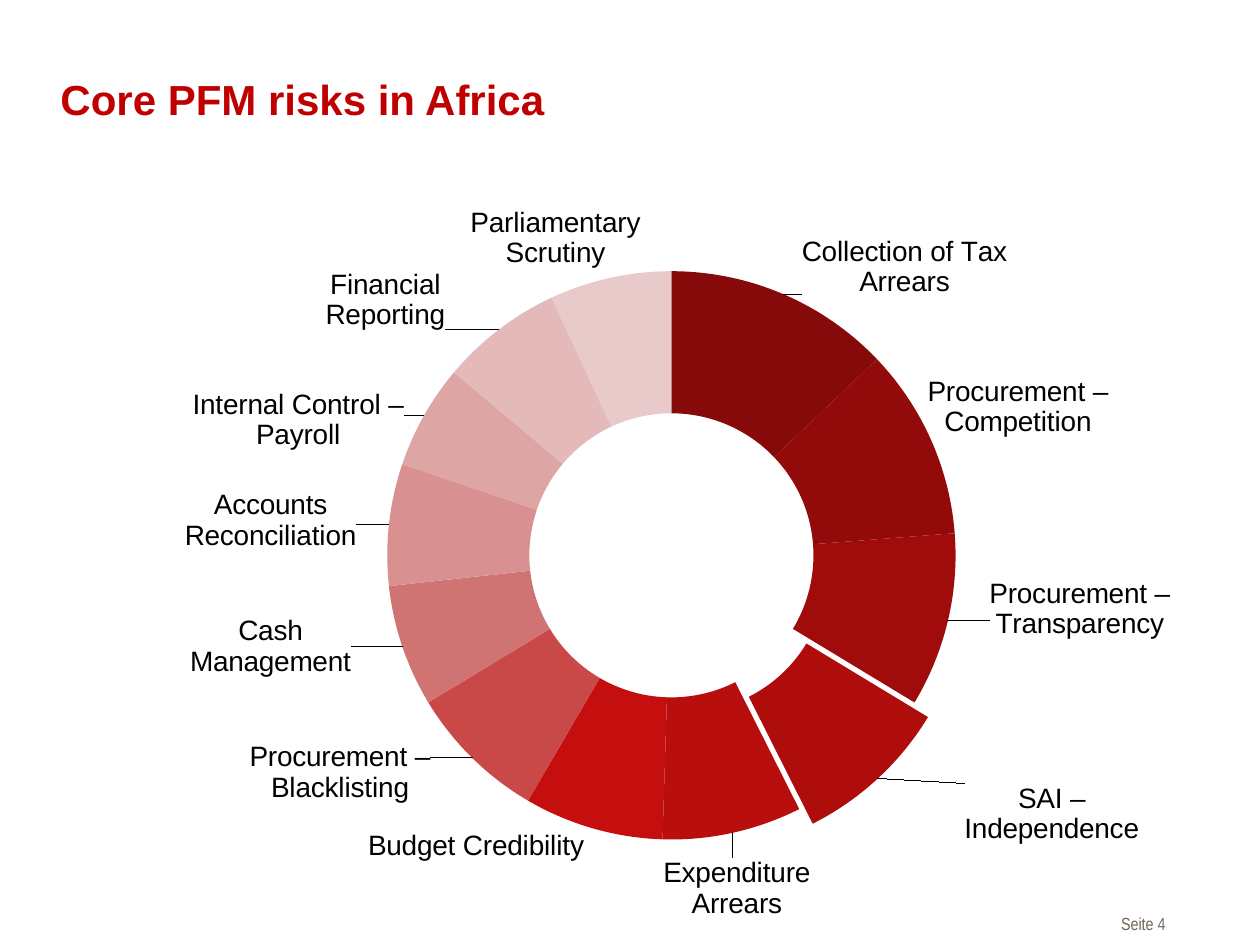
from math import cos, pi, sin

from lxml import etree
from pptx import Presentation
from pptx.chart.data import CategoryChartData
from pptx.dml.color import RGBColor
from pptx.enum.chart import XL_CHART_TYPE as ChartType
from pptx.enum.text import MSO_ANCHOR, PP_ALIGN
from pptx.oxml.ns import qn
from pptx.util import Inches, Pt

TITLE_RED = RGBColor(0xC0, 0x00, 0x00)
BLACK = RGBColor(0x00, 0x00, 0x00)
FOOTER_BROWN = RGBColor(0x6E, 0x64, 0x52)
FOOTER_GREY = RGBColor(0x72, 0x72, 0x72)

CHART_LEFT, CHART_TOP, CHART_WIDTH, CHART_HEIGHT = 0.02, 0.27, 9.98, 7.21
CENTER_X, CENTER_Y = 5.33, 4.41
RING_RADIUS = 1.69
EXPLODED, EXPLOSION = 3, 14

RISKS = [
    ("Collection of Tax Arrears", 13, RGBColor(0x86, 0x0A, 0x09), 7.18, 2.12),
    ("Procurement – Competition", 11, RGBColor(0x92, 0x0B, 0x0A), 8.08, 3.23),
    ("Procurement – Transparency", 10, RGBColor(0xA0, 0x0C, 0x0B), 8.57, 4.83),
    ("SAI – Independence", 9, RGBColor(0xAE, 0x0D, 0x0C), 8.32, 6.43),
    ("Expenditure Arrears", 8, RGBColor(0xB8, 0x0E, 0x0D), 5.85, 7.05),
    ("Budget Credibility", 8, RGBColor(0xC4, 0x0F, 0x0E), 3.78, 6.71),
    ("Procurement – Blacklisting", 8, RGBColor(0xC9, 0x48, 0x48), 2.70, 6.13),
    ("Cash Management", 7, RGBColor(0xD0, 0x73, 0x73), 2.15, 5.13),
    ("Accounts Reconciliation", 7, RGBColor(0xD8, 0x90, 0x90), 2.15, 4.13),
    ("Internal Control – Payroll", 6, RGBColor(0xDD, 0xA5, 0xA4), 2.37, 3.33),
    ("Financial Reporting", 7, RGBColor(0xE3, 0xB9, 0xB9), 3.06, 2.38),
    ("Parliamentary Scrutiny", 7, RGBColor(0xE8, 0xCA, 0xCA), 4.41, 1.89),
]


def set_font(font, size, color, name="Arial", bold=False):
    font.size = Pt(size)
    font.name = name
    font.bold = bold
    font.color.rgb = color


def manual_layout(**values):
    layout = etree.Element(qn("c:layout"))
    manual = etree.SubElement(layout, qn("c:manualLayout"))
    for tag, value in values.items():
        etree.SubElement(manual, qn(f"c:{tag}")).set("val", str(value))
    return layout


def add_title(slide, text):
    sp = slide.shapes.title
    sp.left, sp.top, sp.width, sp.height = map(Inches, (0.38, 0.45, 8.5, 0.67))
    tf = sp.text_frame
    tf.text = text
    tf.vertical_anchor = MSO_ANCHOR.MIDDLE
    p = tf.paragraphs[0]
    p.alignment = PP_ALIGN.LEFT
    set_font(p.font, 24, TITLE_RED, bold=True)


def add_page_number(slide):
    sp = slide.shapes.add_textbox(*map(Inches, (8.24, 7.2, 1.01, 0.27)))
    tf = sp.text_frame
    tf.word_wrap = True
    tf.margin_right = 0
    p = tf.paragraphs[0]
    p.alignment = PP_ALIGN.RIGHT
    for text, color in (("Seite ", FOOTER_BROWN), ("4", FOOTER_GREY)):
        r = p.add_run()
        r.text = text
        set_font(r.font, 10, color, "Arial Narrow")


def place_plot(chart):
    area = chart._chartSpace.chart.plotArea
    old = area.find(qn("c:layout"))
    if old is not None:
        area.remove(old)
    area.insert(0, manual_layout(layoutTarget="inner", xMode="edge", yMode="edge",
                                 x=0.306, y=0.197, w=0.452, h=0.754))


def format_labels(series):
    labels = series.data_labels
    labels.show_category_name = True
    labels.show_value = False
    set_font(labels.font, 16, BLACK)
    dLbls = labels._element
    leader = dLbls.find(qn("c:showLeaderLines"))
    if leader is None:
        leader = etree.SubElement(dLbls, qn("c:showLeaderLines"))
    leader.set("val", "1")


def place_label(series, index, x, y):
    set_font(series.points[index].data_label.font, 16, BLACK)
    dLbl = series._element.xpath(f"c:dLbls/c:dLbl[c:idx/@val='{index}']")[0]
    dLbl.find(qn("c:showVal")).set("val", "0")
    dLbl.find(qn("c:showCatName")).set("val", "1")
    dLbl.find(qn("c:idx")).addnext(manual_layout(
        x=round(x / CHART_WIDTH, 4), y=round(y / CHART_HEIGHT, 4)))


def add_risk_chart(slide):
    data = CategoryChartData()
    data.categories = [risk[0] for risk in RISKS]
    data.add_series("Series 1", [risk[1] for risk in RISKS])
    box = map(Inches, (CHART_LEFT, CHART_TOP, CHART_WIDTH, CHART_HEIGHT))
    chart = slide.shapes.add_chart(ChartType.DOUGHNUT, *box, data).chart
    chart.has_title = False
    chart.has_legend = False
    set_font(chart.font, 10, BLACK)
    place_plot(chart)
    chart.plots[0].vary_by_categories = True
    series = chart.plots[0].series[0]
    format_labels(series)

    total = sum(risk[1] for risk in RISKS)
    start = 0
    for i, (name, value, color, x, y) in enumerate(RISKS):
        fmt = series.points[i].format
        fmt.fill.solid()
        fmt.fill.fore_color.rgb = color
        fmt.line.fill.background()
        radius = RING_RADIUS
        if i == EXPLODED:
            radius *= 1 + EXPLOSION / 200
            spPr = series._element.xpath(f"c:dPt[c:idx/@val='{i}']/c:spPr")[0]
            explosion = etree.Element(qn("c:explosion"))
            explosion.set("val", str(EXPLOSION))
            spPr.addprevious(explosion)
        angle = 2 * pi * (start + value / 2) / total
        place_label(series, i, x - CENTER_X - radius * sin(angle),
                    y - CENTER_Y + radius * cos(angle))
        start += value


def main():
    prs = Presentation()
    prs.slide_width, prs.slide_height = Inches(10), Inches(7.5)
    slide = prs.slides.add_slide(prs.slide_layouts[5])
    add_page_number(slide)
    add_risk_chart(slide)
    add_title(slide, "Core PFM risks in Africa")
    prs.save("out.pptx")


if __name__ == "__main__":
    main()
